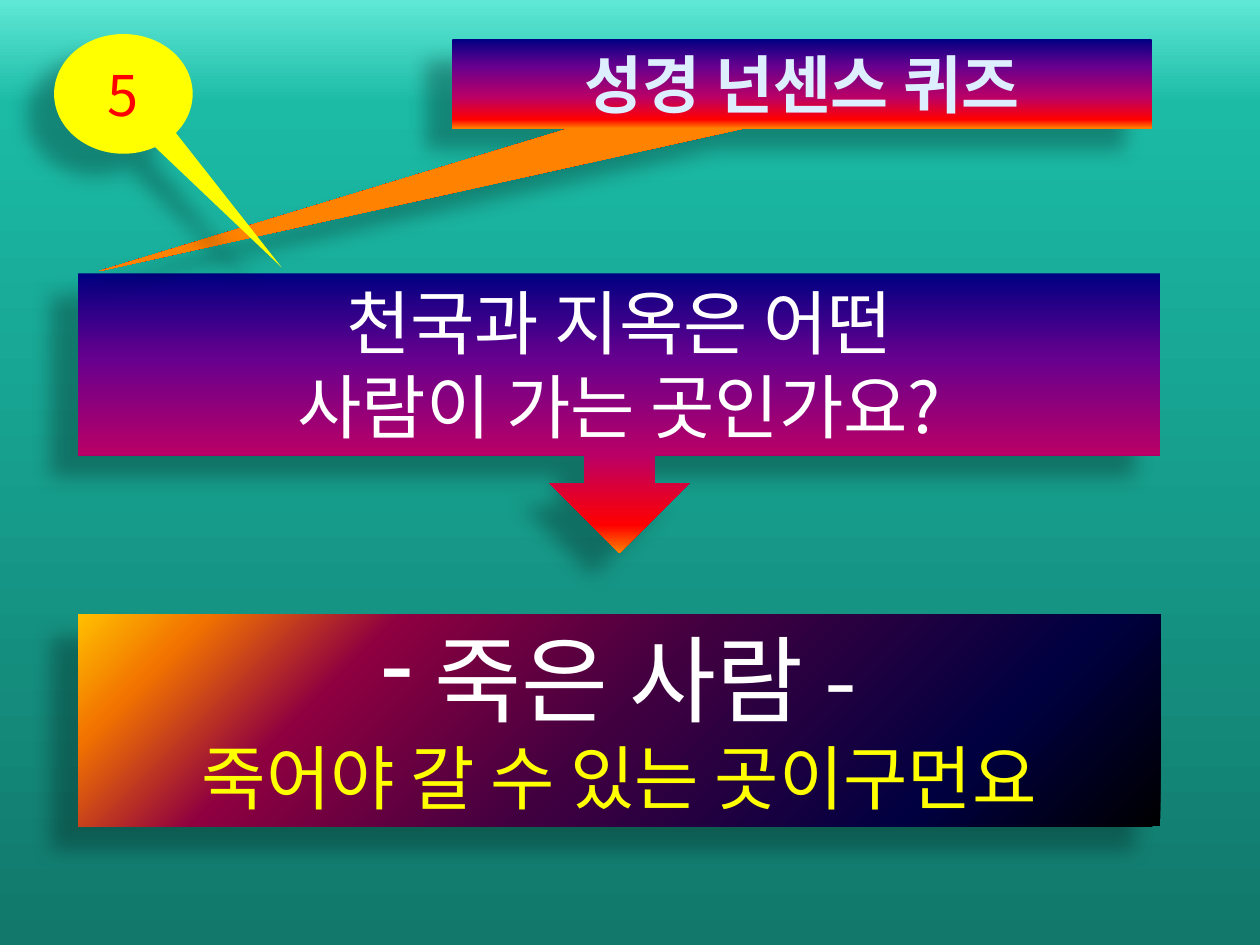
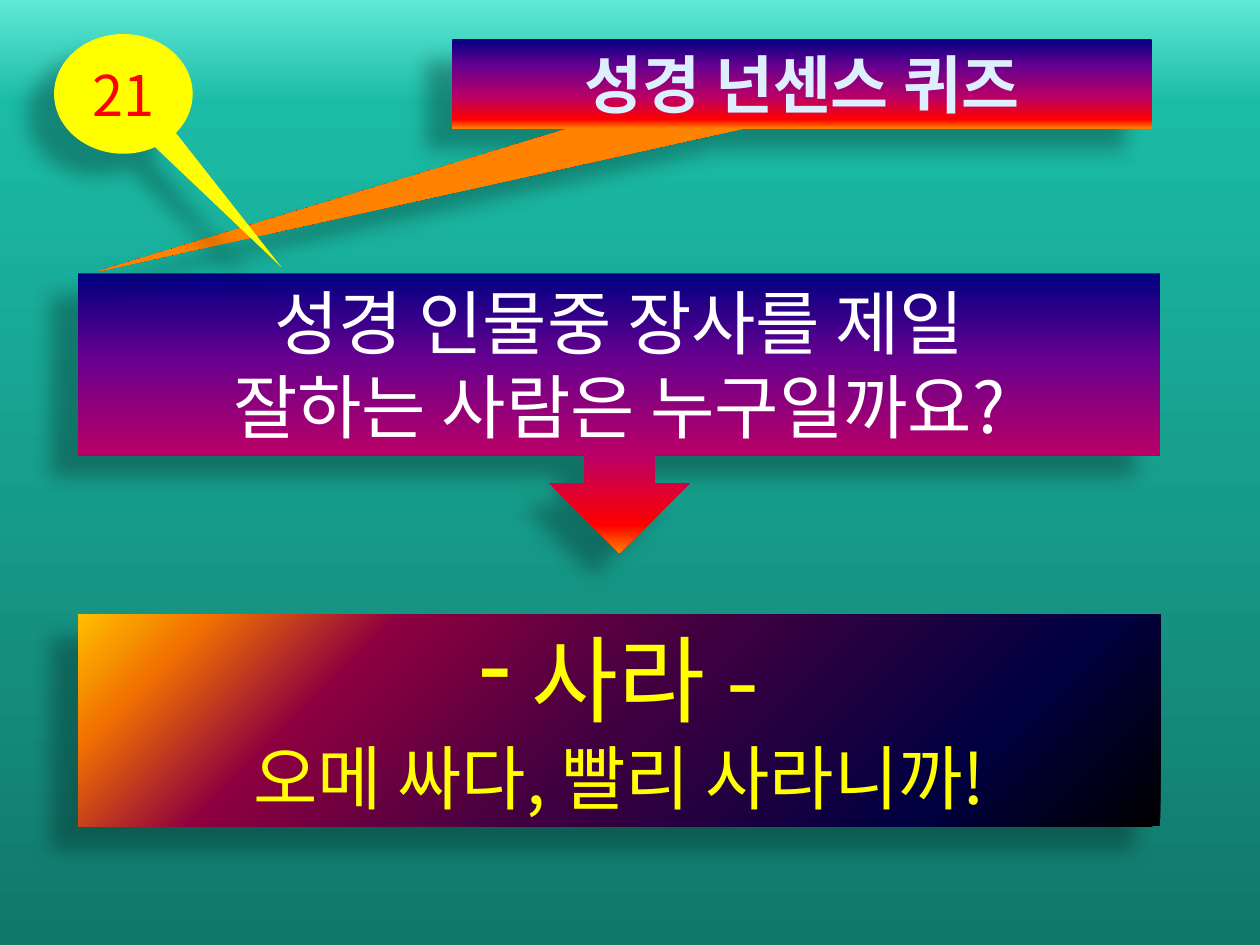
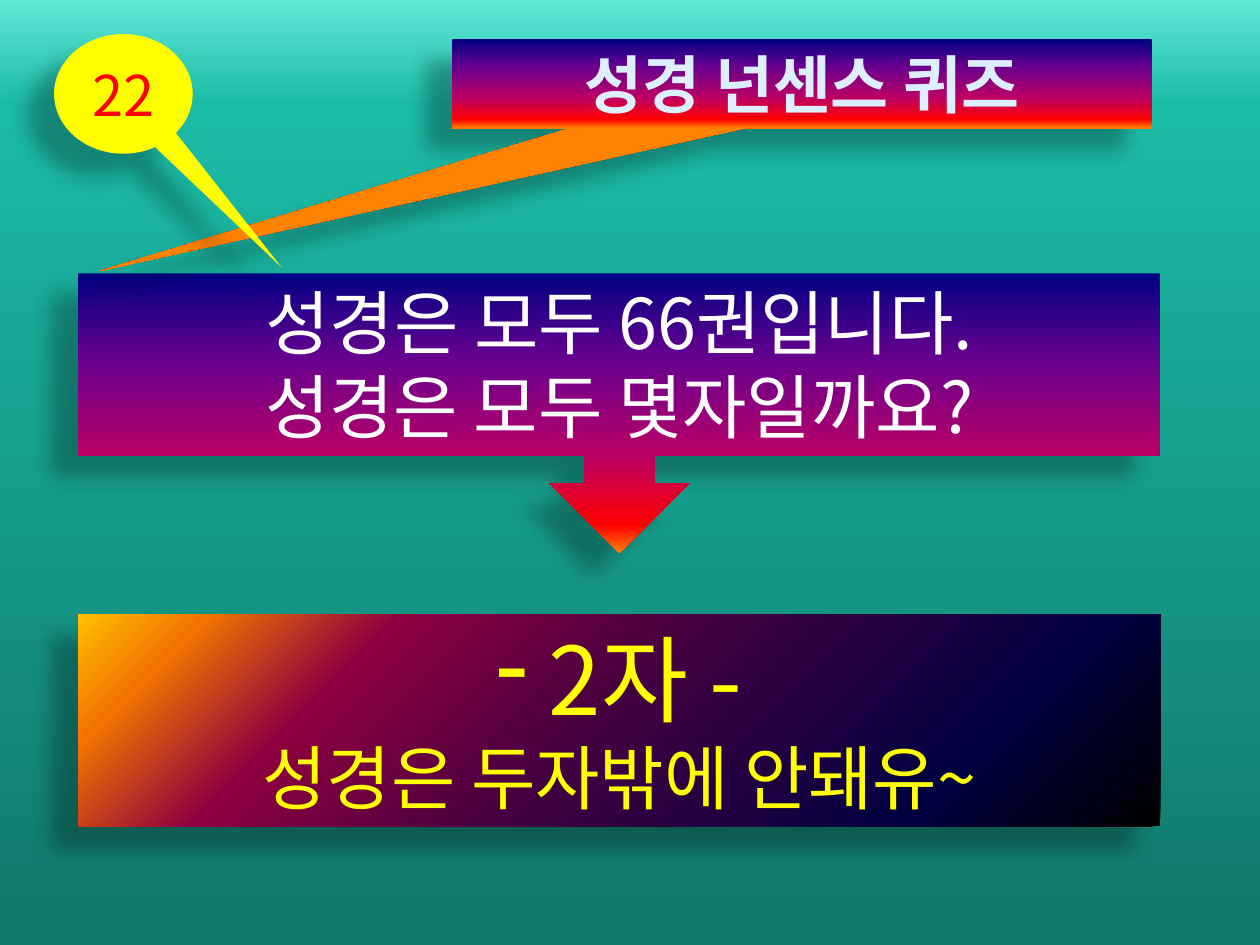
from pptx import Presentation
from pptx.dml.color import RGBColor
from pptx.enum.shapes import MSO_SHAPE as Preset
from pptx.enum.text import MSO_ANCHOR as Anchor, MSO_AUTO_SIZE as AutoSize, PP_ALIGN as Align
from pptx.oxml.xmlchemy import OxmlElement
from pptx.util import Inches, Pt

FONT = "Noto Sans CJK KR"
HEADING = "성경 넌센스 퀴즈"
HEADING_BOX = (3.59, 0.31, 5.55, 0.71)
COLORS = {
    "white": "FFFFFF",
    "yellow": "FFFF00",
    "red": "FF0000",
    "heading": "DDEFFF",
    "heading_outline": "455978",
    "shadow": "000000",
}
BACKDROP = [(0, "11786B"), (89, "1BBBA6"), (100, "5FE8D6")]
SUNSET = [(0, "000082"), (30, "66008F"), (65, "BA0066"), (90, "FF0000"), (100, "FF8200")]
EMBER = [(0, "000000"), (20, "000040"), (50, "400040"), (75, "8F0040"), (90, "F27300"), (100, "FFBF00")]
QUIZZES = [
    ("5", ["천국과 지옥은 어떤", "사람이 가는 곳인가요?"],
     " 죽은 사람 -", "white", "죽어야 갈 수 있는 곳이구먼요"),
    ("21", ["성경 인물중 장사를 제일", "잘하는 사람은 누구일까요?"],
     " 사라 -", "yellow", "오메 싸다, 빨리 사라니까!"),
    ("22", ["성경은 모두 66권입니다.", "성경은 모두 몇자일까요?"],
     " 2자 -", "yellow", "성경은 두자밖에 안돼유~"),
]


def add_child(parent, tag, **attributes):
    child = OxmlElement(tag)
    for name, value in attributes.items():
        child.set(name, str(value))
    parent.append(child)
    return child


def paint_gradient(fill, owner, stops, angle):
    fill.gradient()
    gradient = owner.xpath(".//a:gradFill")[0]
    for child in list(gradient):
        gradient.remove(child)
    stop_list = add_child(gradient, "a:gsLst")
    for position, color in stops:
        stop = add_child(stop_list, "a:gs", pos=position * 1000)
        add_child(stop, "a:srgbClr", val=color)
    add_child(gradient, "a:lin", ang=angle * 60000, scaled=0)


def add_shadow(shape):
    shape.shadow.inherit = False
    effects = shape.element.spPr.find(OxmlElement("a:effectLst").tag)
    shadow = add_child(effects, "a:outerShdw", blurRad=Pt(11.8), dist=Pt(19.7),
                       dir=141 * 60000, algn="ctr", rotWithShape=0)
    color = add_child(shadow, "a:srgbClr", val=COLORS["shadow"])
    add_child(color, "a:alpha", val=28000)


def add_panel(page, preset, bounds, adjustments=()):
    panel = page.shapes.add_shape(preset, *map(Inches, bounds))
    for index, value in enumerate(adjustments):
        panel.adjustments[index] = value
    panel.line.fill.background()
    add_shadow(panel)
    return panel


def write_lines(shape, lines, anchor=Anchor.TOP, auto_size=AutoSize.NONE):
    frame = shape.text_frame
    frame.word_wrap = True
    frame.auto_size = auto_size
    frame.vertical_anchor = anchor
    for index, (text, size, color) in enumerate(lines):
        para = frame.add_paragraph() if index else frame.paragraphs[0]
        para.alignment = Align.CENTER
        para.line_spacing = Pt(size * 1.2)
        span = para.add_run()
        span.text = text
        span.font.size = Pt(size)
        span.font.name = FONT
        span.font.color.rgb = RGBColor.from_string(COLORS[color])
        add_child(span.font._element, "a:ea", typeface=FONT)


def add_heading(page):
    callout = add_panel(page, Preset.RECTANGULAR_CALLOUT, HEADING_BOX, (-1.007, 2.099))
    paint_gradient(callout.fill, callout.element.spPr, SUNSET, 90)
    title = page.shapes.title
    title.left, title.top, title.width, title.height = map(Inches, HEADING_BOX)
    write_lines(title, [(HEADING, 36, "heading")])
    font = title.text_frame.paragraphs[0].runs[0].font
    font.bold = True
    outline = OxmlElement("a:ln")
    outline.set("w", str(Pt(1)))
    add_child(add_child(outline, "a:solidFill"), "a:srgbClr", val=COLORS["heading_outline"])
    font._element.insert(0, outline)
    callout.element.addnext(title.element)


def add_question(page, lines):
    box = add_panel(page, Preset.DOWN_ARROW_CALLOUT, (0.62, 2.17, 8.59, 2.22))
    paint_gradient(box.fill, box.element.spPr, SUNSET, 90)
    write_lines(box, [(line, 40, "white") for line in lines])


def add_answer(page, answer, color, reason):
    box = add_panel(page, Preset.RECTANGLE, (0.62, 4.88, 8.59, 1.68))
    paint_gradient(box.fill, box.element.spPr, EMBER, 225)
    write_lines(box, [(answer, 54, color), (reason, 40, "yellow")],
                auto_size=AutoSize.SHAPE_TO_FIT_TEXT)
    properties = box.text_frame.paragraphs[0]._p.get_or_add_pPr()
    add_child(properties, "a:buChar", char="-")


def add_number(page, number):
    bubble = add_panel(page, Preset.OVAL_CALLOUT, (0.43, 0.27, 1.1, 0.95), (1.141, 1.449))
    bubble.fill.solid()
    bubble.fill.fore_color.rgb = RGBColor.from_string(COLORS["yellow"])
    write_lines(bubble, [(number, 32, "red")], Anchor.MIDDLE)


def main():
    deck = Presentation()
    deck.slide_width, deck.slide_height = Inches(10), Inches(7.5)
    master = deck.slide_master
    paint_gradient(master.background.fill, master.element.cSld.bg, BACKDROP, 270)
    for number, question, answer, color, reason in QUIZZES:
        page = deck.slides.add_slide(deck.slide_layouts[5])
        add_question(page, question)
        add_heading(page)
        add_answer(page, answer, color, reason)
        add_number(page, number)
    deck.save("out.pptx")


if __name__ == "__main__":
    main()
